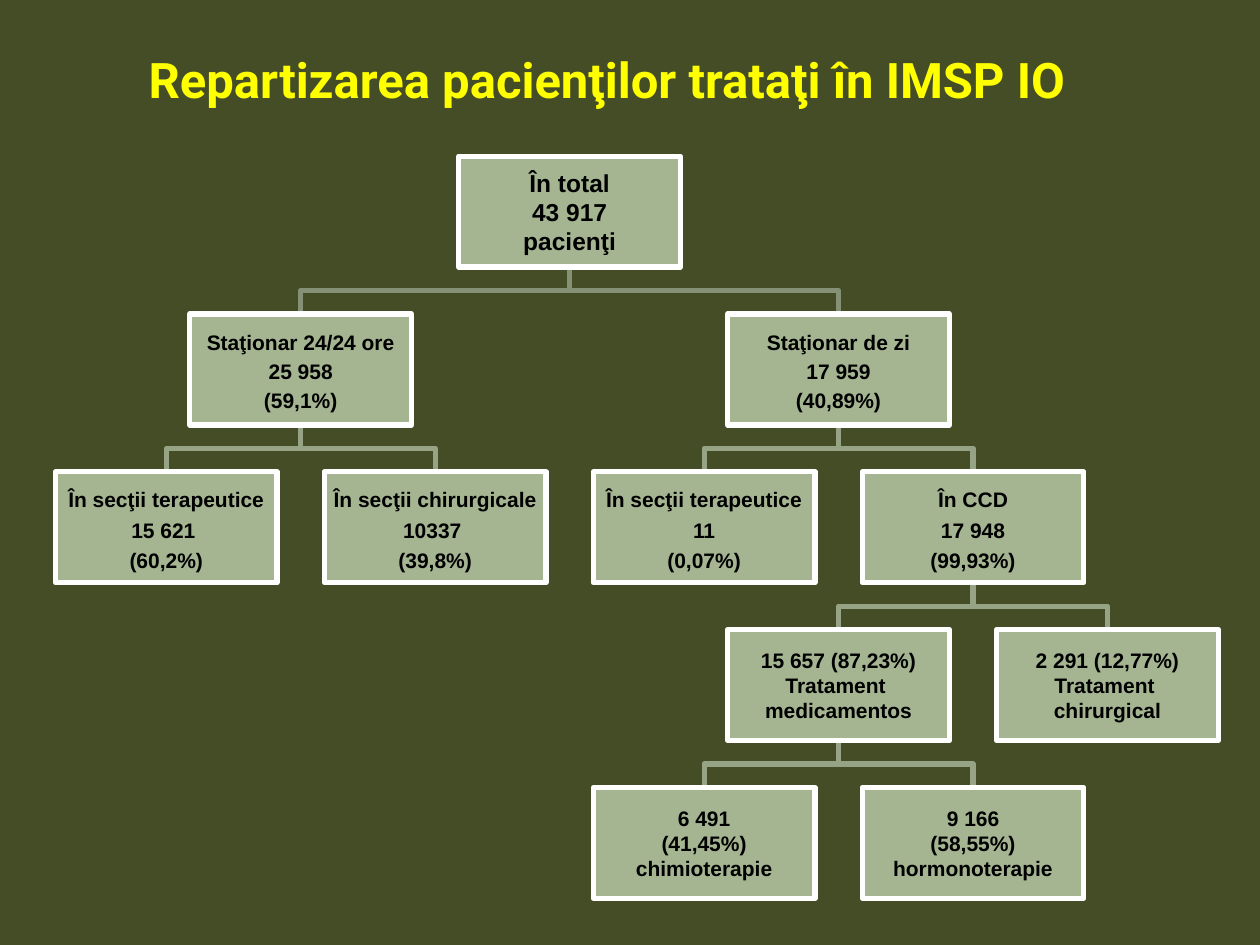
from dataclasses import dataclass
from typing import Any

from pptx import Presentation
from pptx.dml.color import RGBColor
from pptx.enum.shapes import MSO_SHAPE
from pptx.enum.text import MSO_ANCHOR, PP_ALIGN
from pptx.util import Inches, Pt


def color(value):
    return RGBColor.from_string(value)


@dataclass
class OrgChart:
    s: Any
    background: str = "444D26"
    box_fill: str = "A5B592"
    border: str = "FFFFFF"
    ink: str = "000000"
    title_ink: str = "FFFF00"
    first_center: float = 1.32
    col_step: float = 7.47 / 7
    first_top: float = 1.24
    row_step: float = 5.01 / 4
    box_w: float = 1.76
    box_h: float = 0.88
    line_w: int = 3

    def center(self, col):
        return self.first_center + col * self.col_step

    def top(self, row):
        return self.first_top + row * self.row_step

    def paint_background(self):
        fill = self.s.background.fill
        fill.solid()
        fill.fore_color.rgb = color(self.background)

    def set_text(self, tf, text, font, size, ink, spacing=None):
        tf.word_wrap = True
        tf.vertical_anchor = MSO_ANCHOR.MIDDLE
        tf.text = text
        for p in tf.paragraphs:
            p.alignment = PP_ALIGN.CENTER
            if spacing:
                p.line_spacing = spacing
            for r in p.runs:
                r.font.name = font
                r.font.size = Pt(size)
                r.font.bold = True
                r.font.color.rgb = color(ink)

    def title(self, text):
        sp = self.s.shapes.add_textbox(0, Inches(0.13), Inches(9.73), Inches(1))
        self.set_text(sp.text_frame, text, "Roboto", 28, self.title_ink)

    def branch(self, row, parent_col, child_col, ink):
        start, end = self.center(parent_col), self.center(child_col)
        bottom, below = self.top(row) + self.box_h, self.top(row + 1)
        middle = (bottom + below) / 2
        fb = self.s.shapes.build_freeform(
            Inches(start), Inches(bottom)
        )
        fb.add_line_segments(
            [
                (Inches(x), Inches(y))
                for x, y in [(start, middle), (end, middle), (end, below)]
            ],
            close=False,
        )
        sp = fb.convert_to_shape()
        sp.shadow.inherit = False
        sp.fill.background()
        sp.line.color.rgb = color(ink)
        sp.line.width = Pt(self.line_w)

    def box(self, row, col, text, size, spacing):
        sp = self.s.shapes.add_shape(
            MSO_SHAPE.RECTANGLE,
            Inches(self.center(col) - self.box_w / 2),
            Inches(self.top(row)),
            Inches(self.box_w),
            Inches(self.box_h),
        )
        sp.shadow.inherit = False
        sp.fill.solid()
        sp.fill.fore_color.rgb = color(self.box_fill)
        sp.line.color.rgb = color(self.border)
        sp.line.width = Pt(self.line_w)
        tf = sp.text_frame
        tf.margin_left = tf.margin_right = Inches(0.01)
        tf.margin_top = tf.margin_bottom = Inches(0.01)
        self.set_text(tf, text, "Arial", size, self.ink, spacing)


ROW_STYLES = [(14, None), (12, 1.15), (12, 1.2), (12, None), (12, None)]

BOXES = [
    (0, 3, "În total\n43 917\npacienţi"),
    (1, 1, "Staţionar 24/24 ore\n25 958\n(59,1%)"),
    (2, 0, "În secţii terapeutice\n15 621 \n(60,2%)"),
    (2, 2, "În secţii chirurgicale\n10337 \n(39,8%)"),
    (1, 5, "Staţionar de zi\n17 959\n(40,89%)"),
    (2, 4, "În secţii terapeutice\n11\n(0,07%)"),
    (2, 6, "În CCD\n17 948\n(99,93%)"),
    (3, 5, "15 657 (87,23%)\nTratament \nmedicamentos"),
    (4, 4, "6 491\n(41,45%)\nchimioterapie"),
    (4, 6, "9 166\n(58,55%)\nhormonoterapie"),
    (3, 7, "2 291 (12,77%)\nTratament \nchirurgical"),
]

FORKS = [
    (2, 6, 1, "96A485"),
    (3, 5, 1, "96A485"),
    (1, 5, 1, "96A485"),
    (1, 1, 1, "96A485"),
    (0, 3, 2, "849175"),
]


def main():
    prs = Presentation()
    prs.slide_width, prs.slide_height = Inches(10), Inches(7.5)
    chart = OrgChart(prs.slides.add_slide(prs.slide_layouts[6]))
    chart.paint_background()
    for row, col, reach, ink in FORKS:
        for child in (col + reach, col - reach):
            chart.branch(row, col, child, ink)
    for row, col, text in BOXES:
        chart.box(row, col, text, *ROW_STYLES[row])
    chart.title("Repartizarea pacienţilor trataţi în IMSP IO ")
    prs.save("out.pptx")


if __name__ == "__main__":
    main()
